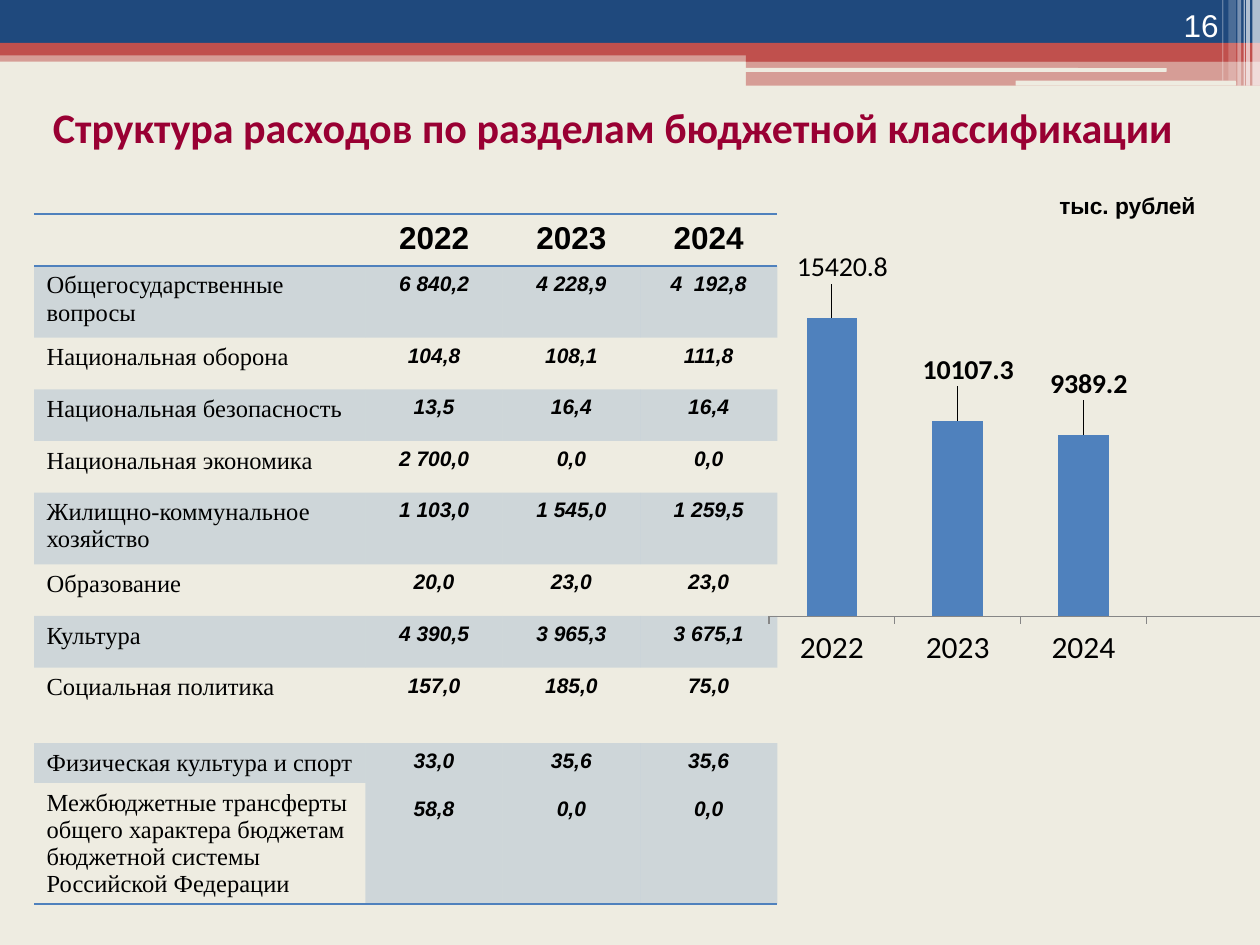
from dataclasses import dataclass

from lxml import etree
from pptx import Presentation
from pptx import util as u
from pptx.chart import data as chart_data
from pptx.dml import color
from pptx.enum import chart as chart_enum
from pptx.enum import shapes, text
from pptx.oxml import ns

NAVY, RED, CREAM, BLUE, WHITE, BLACK = "1F497D", "C0504D", "EEECE1", "4F81BD", "FFFFFF", "000000"
NO_STYLE = "{2D5ABB26-0587-4C30-8999-92F81FD0307C}"
YEARS = ["2022", "2023", "2024"]


@dataclass
class Band:
    left: float
    top: float
    width: float
    height: float
    fill: str
    opacity: int = 100
    rounded: bool = False


@dataclass
class Style:
    size: float
    font: str
    color: str = BLACK
    bold: bool = False
    italic: bool = False


@dataclass
class Section:
    name: str
    values: list[str]
    height: float
    shaded: bool


BANDS = [
    Band(0, 0.4, 10, 0.09, RED, 50),
    Band(0, 0, 10, 0.34, NAVY),
    Band(0, 0.34, 10, 0.1, RED),
    Band(5.92, 0.39, 4.08, 0.1, RED),
    Band(5.92, 0.48, 4.08, 0.2, RED, 50),
    Band(5.91, 0.54, 3.35, 0.03, CREAM, rounded=True),
    Band(8.06, 0.64, 1.75, 0.04, CREAM, rounded=True),
    Band(9.94, 0, 0.06, 0.68, WHITE, 65),
    Band(9.89, 0, 0.03, 0.68, WHITE, 65),
    Band(9.87, 0, 0.01, 0.68, WHITE, 60),
    Band(9.82, 0, 0.03, 0.68, WHITE, 40),
    Band(9.75, 0, 0.06, 0.64, WHITE, 20),
    Band(9.7, 0, 0.01, 0.64, WHITE, 30),
]
SECTIONS = [
    Section("Общегосударственные вопросы", ["6 840,2", "4 228,9", "4  192,8"], 0.57, True),
    Section("Национальная оборона", ["104,8", "108,1", "111,8"], 0.41, False),
    Section("Национальная безопасность", ["13,5", "16,4", "16,4"], 0.41, True),
    Section("Национальная экономика", ["2 700,0", "0,0", "0,0"], 0.41, False),
    Section("Жилищно-коммунальное хозяйство", ["1 103,0", "1 545,0", "1 259,5"], 0.57, True),
    Section("Образование", ["20,0", "23,0", "23,0"], 0.41, False),
    Section("Культура", ["4 390,5", "3 965,3", "3 675,1"], 0.41, True),
    Section("Социальная политика", ["157,0", "185,0", "75,0"], 0.6, False),
    Section("Физическая культура и спорт", ["33,0\n58,8", "35,6\n0,0", "35,6\n0,0"], 0.31, True),
    Section("Межбюджетные трансферты общего характера бюджетам бюджетной системы Российской Федерации",
            [], 0.96, False),
]
HEADING = Style(18, "Arial", bold=True)
NAME = Style(14, "Times New Roman")
AMOUNT = Style(12, "Arial", bold=True, italic=True)


def rgb(value: str) -> color.RGBColor:
    return color.RGBColor.from_string(value)


def set_fill(fill, value: str, opacity: int = 100) -> None:
    fill.solid()
    fill.fore_color.rgb = rgb(value)
    if opacity < 100:
        tint = fill._xPr.find(ns.qn("a:solidFill"))[0]
        etree.SubElement(tint, ns.qn("a:alpha"), val=str(opacity * 1000))


def set_font(font, style: Style) -> None:
    font.size, font.name = u.Pt(style.size), style.font
    font.bold, font.italic = style.bold, style.italic
    font.color.rgb = rgb(style.color)


def write(frame, words: str, style: Style, align=text.PP_ALIGN.LEFT, gap: float = 0) -> None:
    frame.text = words
    for index, para in enumerate(frame.paragraphs):
        para.alignment = align
        if index:
            para.space_before = u.Pt(gap)
        for span in para.runs:
            set_font(span.font, style)


def add_band(page, band: Band) -> None:
    preset = shapes.MSO_SHAPE.ROUNDED_RECTANGLE if band.rounded else shapes.MSO_SHAPE.RECTANGLE
    box = page.shapes.add_shape(preset, u.Inches(band.left), u.Inches(band.top),
                                u.Inches(band.width), u.Inches(band.height))
    box.shadow.inherit = False
    box.line.fill.background()
    set_fill(box.fill, band.fill, band.opacity)


def add_text(page, left: float, top: float, width: float, height: float, words: str,
             style: Style, align=text.PP_ALIGN.LEFT, anchor=text.MSO_ANCHOR.TOP) -> None:
    box = page.shapes.add_textbox(u.Inches(left), u.Inches(top), u.Inches(width), u.Inches(height))
    box.text_frame.word_wrap = True
    box.text_frame.vertical_anchor = anchor
    write(box.text_frame, words, style, align)


def add_border(cell, side: str) -> None:
    line = etree.SubElement(cell._tc.get_or_add_tcPr(), ns.qn(f"a:ln{side}"), w=str(u.Pt(1)))
    fill = etree.SubElement(line, ns.qn("a:solidFill"))
    etree.SubElement(fill, ns.qn("a:srgbClr"), val=BLUE)


def add_budget_table(page) -> None:
    heights = [0.41] + [section.height for section in SECTIONS]
    frame = page.shapes.add_table(len(heights), 4, u.Inches(0.27), u.Inches(1.7),
                                  u.Inches(5.9), u.Inches(sum(heights)))
    table = frame.table
    table.first_row = table.horz_banding = False
    table._tbl.tblPr.find(ns.qn("a:tableStyleId")).text = NO_STYLE
    for column, width in zip(table.columns, [2.63, 1.09, 1.09, 1.09]):
        column.width = u.Inches(width)
    for row, height in zip(table.rows, heights):
        row.height = u.Inches(height)
    last = len(SECTIONS)
    for column in range(4):
        for row, sides in ((0, "TB"), (last, "B")):
            for side in sides:
                add_border(table.cell(row, column), side)
        if column:
            add_border(table.cell(last - 1, column), "B")
            table.cell(last - 1, column).merge(table.cell(last, column))
            write(table.cell(0, column).text_frame, YEARS[column - 1], HEADING, text.PP_ALIGN.CENTER)
    for row, section in enumerate(SECTIONS, 1):
        write(table.cell(row, 0).text_frame, section.name, NAME)
        for column, amount in enumerate(section.values, 1):
            write(table.cell(row, column).text_frame, amount, AMOUNT, text.PP_ALIGN.CENTER, 14)
        for column in range(4):
            if section.shaded:
                set_fill(table.cell(row, column).fill, BLUE, 20)


def place_label(point, style: Style, shift_x: float, shift_y: float) -> None:
    label = point.data_label
    set_font(label.font, style)
    label.position = chart_enum.XL_LABEL_POSITION.OUTSIDE_END
    element = label._get_or_add_dLbl()
    layout = etree.Element(ns.qn("c:layout"))
    manual = etree.SubElement(layout, ns.qn("c:manualLayout"))
    for axis, shift in (("x", shift_x), ("y", shift_y)):
        etree.SubElement(manual, ns.qn(f"c:{axis}"), val=str(shift))
    element.insert(1, layout)


def add_totals_chart(page) -> None:
    totals = chart_data.CategoryChartData(number_format="0.0")
    totals.categories = YEARS + [""]
    totals.add_series("Расходы", [15420.8, 10107.3, 9389.2, None])
    chart = page.shapes.add_chart(chart_enum.XL_CHART_TYPE.COLUMN_CLUSTERED, u.Inches(6.02),
                                  u.Inches(1.99), u.Inches(4.16), u.Inches(3.36), totals).chart
    chart.has_legend = chart.has_title = False
    set_font(chart.font, Style(18, "Calibri"))
    values, years = chart.value_axis, chart.category_axis
    values.visible = values.has_major_gridlines = False
    values.minimum_scale, values.maximum_scale = 0, 18000
    years.major_tick_mark = chart_enum.XL_TICK_MARK.OUTSIDE
    years.format.line.color.rgb = rgb("868686")
    set_font(years.tick_labels.font, Style(18, "Calibri"))
    plot = chart.plots[0]
    plot.gap_width, plot.vary_by_categories = 150, False
    series = plot.series[0]
    set_fill(series.format.fill, BLUE)
    series.data_labels.show_value = True
    set_font(series.data_labels.font, Style(16, "Calibri", bold=True))
    for index, shift_x in enumerate([0.02, 0.02, 0.01]):
        place_label(series.points[index], Style(16, "Calibri", bold=index > 0), shift_x, -0.07)


def main() -> None:
    """Build the slide on the structure of budget expenses."""
    deck = Presentation()
    deck.slide_width, deck.slide_height = u.Inches(10), u.Inches(7.5)
    page = deck.slides.add_slide(deck.slide_layouts[6])
    set_fill(page.background.fill, CREAM)
    for band in BANDS:
        add_band(page, band)
    add_budget_table(page)
    add_text(page, 0, 0.76, 9.73, 0.51, "Структура расходов по разделам бюджетной классификации",
             Style(24, "Calibri", "990033", bold=True), text.PP_ALIGN.CENTER)
    add_text(page, 8.94, 0, 0.83, 0.4, "16", Style(18, "Arial", WHITE),
             text.PP_ALIGN.RIGHT, text.MSO_ANCHOR.BOTTOM)
    add_text(page, 8.31, 1.47, 1.5, 0.32, "тыс. рублей", Style(13, "Arial", bold=True))
    add_totals_chart(page)
    deck.save("out.pptx")


if __name__ == "__main__":
    main()
